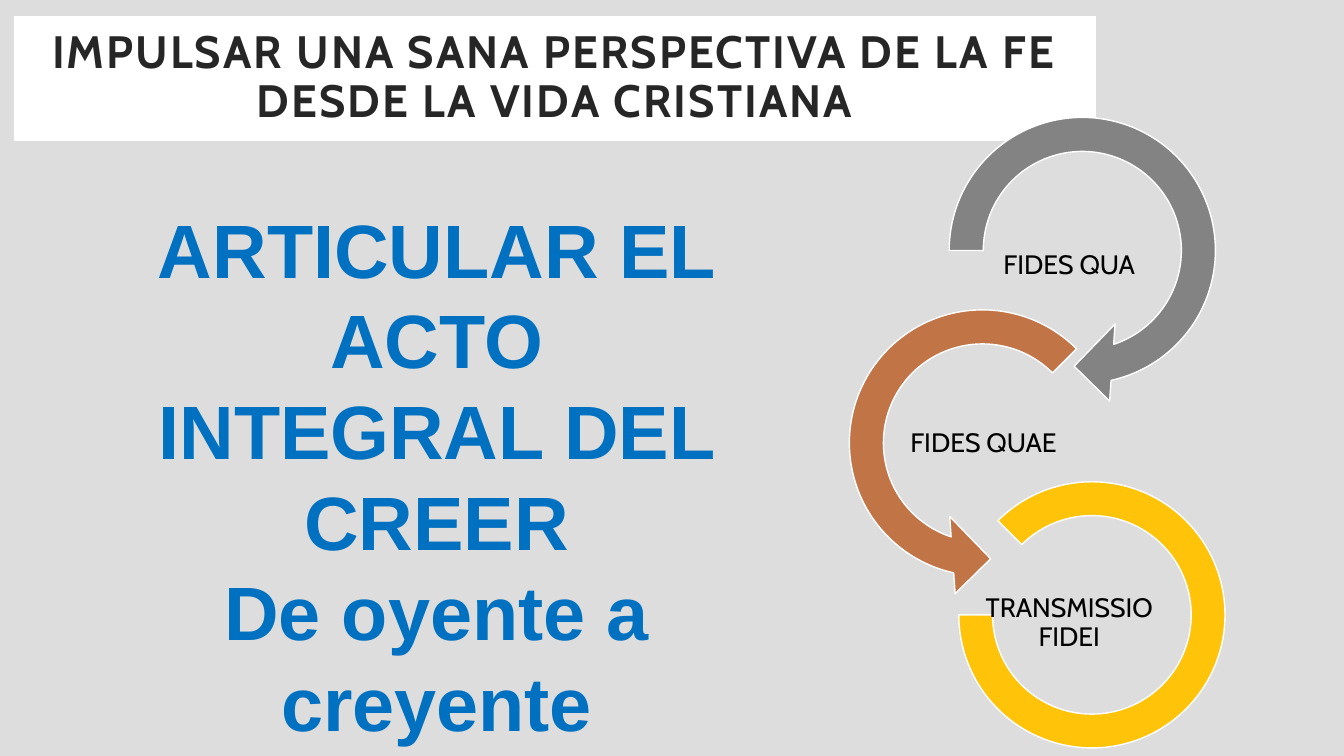
"""Builds the slide about the integral act of believing."""
from pptx import Presentation
from pptx.dml.color import RGBColor
from pptx.enum.shapes import MSO_SHAPE as Preset
from pptx.enum.text import MSO_ANCHOR as Anchor, PP_ALIGN as Align
from pptx.util import Inches, Pt

COLORS = {
    "background": "DDDDDD", "white": "FFFFFF", "title": "262626", "message": "0070C0",
    "label": "000000", "gray": "838383", "brown": "C17445", "yellow": "FFC30A",
}
TITLE = ["IMPULSAR UNA SANA PERSPECTIVA DE LA FE DESDE LA VIDA CRISTIANA"]
MESSAGE = ["ARTICULAR EL ACTO INTEGRAL DEL CREER", "De oyente a creyente"]
TITLE_FONT = {"name": "Cabin", "size": Pt(32.4), "bold": True}
MESSAGE_FONT = {"name": "Arial", "size": Pt(54), "bold": True}
LABEL_FONT = {"name": "Cabin", "size": Pt(19), "bold": False}
LABEL_SIZE = (1.71, 0.85)
RINGS = [
    (Preset.CIRCULAR_ARROW, (9.2, 0.95), 3.07, "gray", (0.11, 11.42, 45, 108, 0.125),
     "FIDES QUA", (9.75, 2.21)),
    (Preset.LEFT_CIRCULAR_ARROW, (8.21, 2.86), 3.07, "brown", (0.11, 11.42, 63, 189, 0.125),
     "FIDES QUAE", (8.9, 3.98)),
    (Preset.BLOCK_ARC, (9.51, 4.78), 2.64, "yellow", (135, 108, 0.127),
     "TRANSMISSIO FIDEI", (9.75, 5.76)),
]


def color(name):
    return RGBColor.from_string(COLORS[name])


def add_preset(slide, preset, box, fill, line=None, width=1):
    shape = slide.shapes.add_shape(preset, *map(Inches, box))
    shape.shadow.inherit = False
    shape.fill.solid()
    shape.fill.fore_color.rgb = color(fill)
    if line:
        shape.line.color.rgb = color(line)
        shape.line.width = Pt(width)
    else:
        shape.line.fill.background()
    return shape


def write(shape, lines, font, ink, insets, anchor=Anchor.MIDDLE, spacing=0.9, tracking=0):
    frame = shape.text_frame
    frame.word_wrap = True
    frame.vertical_anchor = anchor
    for side, inset in zip(("left", "top", "right", "bottom"), insets):
        setattr(frame, f"margin_{side}", Inches(inset))
    for index, line in enumerate(lines):
        paragraph = frame.add_paragraph() if index else frame.paragraphs[0]
        paragraph.alignment = Align.CENTER
        paragraph.line_spacing = spacing
        run = paragraph.add_run()
        run.text = line
        for key, value in font.items():
            setattr(run.font, key, value)
        run.font.color.rgb = color(ink)
        if tracking:
            run.font._element.set("spc", str(tracking))


def main():
    presentation = Presentation()
    presentation.slide_width, presentation.slide_height = Inches(13.33), Inches(7.5)
    slide = presentation.slides.add_slide(presentation.slide_layouts[6])
    slide.background.fill.solid()
    slide.background.fill.fore_color.rgb = color("background")

    banner = add_preset(slide, Preset.RECTANGLE, (0.12, 0.14, 10.77, 1.28),
                        "white", "background", 2.5)
    write(banner, TITLE, TITLE_FONT, "title", [0.2] * 4, tracking=150)

    for preset, corner, size, fill, adjustments, label, label_corner in RINGS:
        ring = add_preset(slide, preset, (*corner, size, size), fill, "white")
        for index, value in enumerate(adjustments):
            ring.adjustments[index] = value
        caption = slide.shapes.add_textbox(*map(Inches, label_corner + LABEL_SIZE))
        write(caption, [label], LABEL_FONT, "label", [0.01] * 4)

    message = add_preset(slide, Preset.RECTANGLE, (1.18, 1.96, 6.3, 5.55), "background")
    write(message, MESSAGE, MESSAGE_FONT, "message", (0.1, 0.05, 0.1, 0.05), Anchor.TOP, 1.0)
    presentation.save("out.pptx")


if __name__ == "__main__":
    main()
